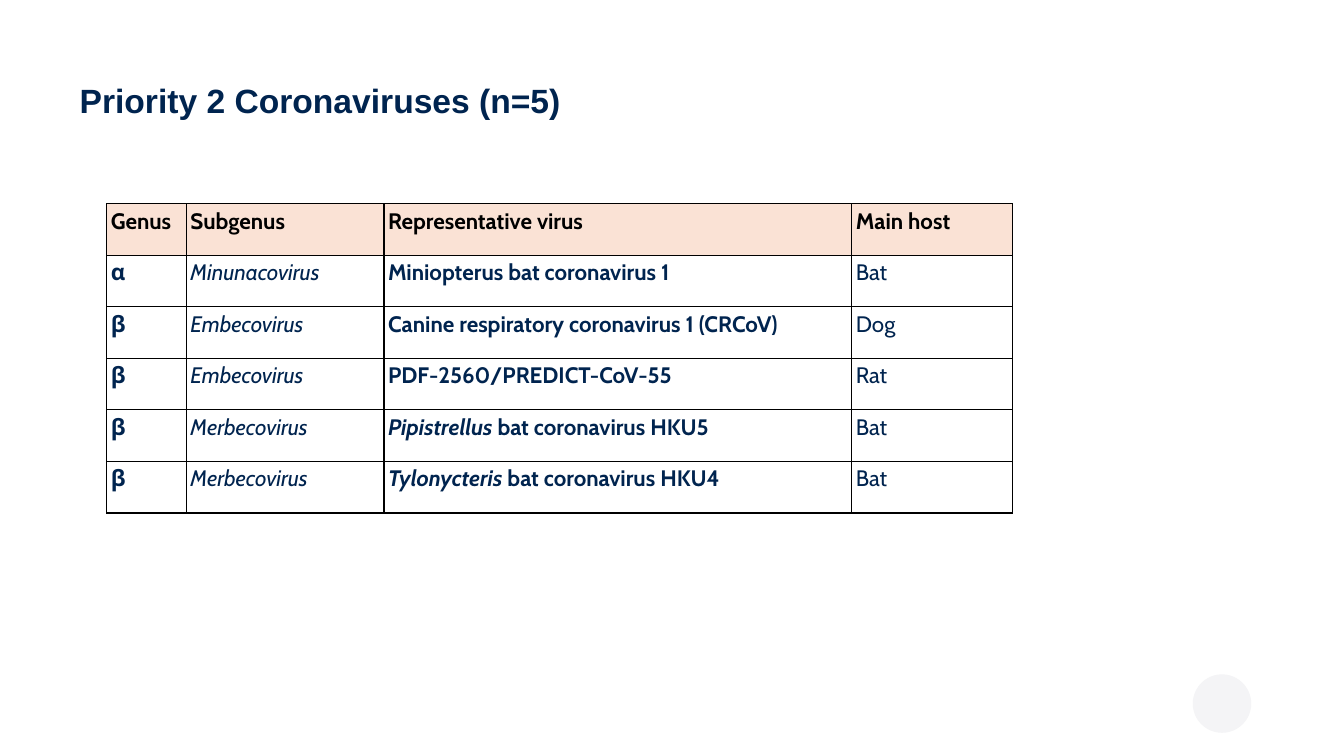
import dataclasses

import pptx
import pptx.dml.color
import pptx.enum.shapes
import pptx.enum.text
import pptx.oxml
import pptx.oxml.ns
import pptx.util
from lxml import etree


@dataclasses.dataclass(frozen=True)
class Theme:
    navy: str = "00244F"
    black: str = "000000"
    header_fill: str = "FAE2D5"
    disc_fill: str = "F4F4F6"
    title_font: str = "Arial"
    body_font: str = "Cabin"
    title_size: int = 24
    body_size: int = 16
    border_width: int = 1


THEME = Theme()
SLIDE_SIZE = (13.33, 7.5)
TITLE_BOX = (0.79, 0.77, 11.5, 0.49)
TABLE_BOX = (1.06, 2.02, 8.98, 3.07)
DISC_BOX = (11.83, 6.69, 0.58, 0.58)
COLUMN_SHARES = (0.79, 1.96, 4.64, 1.59)
HEADINGS = ("Genus", "Subgenus", "Representative virus", "Main host")
VIRUSES = (
    ("α", "Minunacovirus", "", "Miniopterus bat coronavirus 1", "Bat"),
    ("β", "Embecovirus", "", "Canine respiratory coronavirus 1 (CRCoV)", "Dog"),
    ("β", "Embecovirus", "", "PDF-2560/PREDICT-CoV-55", "Rat"),
    ("β", "Merbecovirus", "Pipistrellus", " bat coronavirus HKU5", "Bat"),
    ("β", "Merbecovirus", "Tylonycteris", " bat coronavirus HKU4", "Bat"),
)


def inches(values):
    return [pptx.util.Inches(v) for v in values]


def rgb(color):
    return pptx.dml.color.RGBColor.from_string(color)


def add_run(p, text, size=THEME.body_size, font=THEME.body_font,
            color=THEME.navy, bold=False, italic=False):
    r = p.add_run()
    r.text = text
    r.font.size = pptx.util.Pt(size)
    r.font.name = font
    r.font.color.rgb = rgb(color)
    r.font.bold = bold
    r.font.italic = italic


def set_borders(cell):
    tc_pr = cell._tc.get_or_add_tcPr()
    for i, side in enumerate(("lnL", "lnR", "lnT", "lnB")):
        ln = etree.Element(pptx.oxml.ns.qn(f"a:{side}"),
                           w=str(pptx.util.Pt(THEME.border_width)))
        fill = etree.SubElement(ln, pptx.oxml.ns.qn("a:solidFill"))
        etree.SubElement(fill, pptx.oxml.ns.qn("a:srgbClr"), val=THEME.black)
        tc_pr.insert(i, ln)


def fill_cell(cell, runs, fill=None):
    cell.margin_left = cell.margin_right = pptx.util.Inches(0.04)
    cell.margin_top = cell.margin_bottom = 0
    if fill:
        cell.fill.solid()
        cell.fill.fore_color.rgb = rgb(fill)
    else:
        cell.fill.background()
    set_borders(cell)
    p = cell.text_frame.paragraphs[0]
    p.line_spacing = 1.15
    p.space_after = pptx.util.Pt(8)
    for text, style in runs:
        add_run(p, text, **style)


def virus_cells(genus, subgenus, host_genus, virus, host):
    bold = {"bold": True}
    name = [(virus, bold)]
    if host_genus:
        name.insert(0, (host_genus, {"bold": True, "italic": True}))
    return [[(genus, bold)], [(subgenus, {"italic": True})], name, [(host, {})]]


def add_title(s, box, text):
    sp = s.shapes.title
    sp.left, sp.top, sp.width, sp.height = inches(box)
    tf = sp.text_frame
    tf.word_wrap = True
    tf.auto_size = pptx.enum.text.MSO_AUTO_SIZE.NONE
    tf.vertical_anchor = pptx.enum.text.MSO_ANCHOR.MIDDLE
    tf.margin_left, tf.margin_top, tf.margin_right, tf.margin_bottom = inches(
        (0, 0.05, 0.1, 0.05))
    p = tf.paragraphs[0]
    p.alignment = pptx.enum.text.PP_ALIGN.LEFT
    p.line_spacing = 0.9
    p.space_after = pptx.util.Pt(6)
    add_run(p, text, size=THEME.title_size, font=THEME.title_font, bold=True)


def add_virus_table(s, box):
    heading = {"color": THEME.black, "bold": True}
    rows = [[[(text, heading)] for text in HEADINGS]]
    rows += [virus_cells(*virus) for virus in VIRUSES]
    table = s.shapes.add_table(len(rows), len(HEADINGS), *inches(box)).table
    table.horz_banding = False
    for column, share in zip(table.columns, COLUMN_SHARES):
        column.width = pptx.util.Inches(box[2] * share / sum(COLUMN_SHARES))
    for i, row in enumerate(rows):
        for j, runs in enumerate(row):
            fill_cell(table.cell(i, j), runs, None if i else THEME.header_fill)


def add_disc(s, box):
    sp = s.shapes.add_shape(pptx.enum.shapes.MSO_SHAPE.OVAL, *inches(box))
    sp.shadow.inherit = False
    sp.fill.solid()
    sp.fill.fore_color.rgb = rgb(THEME.disc_fill)
    sp.line.fill.background()


def main():
    prs = pptx.Presentation()
    prs.slide_width, prs.slide_height = inches(SLIDE_SIZE)
    s = prs.slides.add_slide(prs.slide_layouts.get_by_name("Title Only"))
    add_disc(s, DISC_BOX)
    add_virus_table(s, TABLE_BOX)
    add_title(s, TITLE_BOX, "Priority 2 Coronaviruses (n=5)")
    prs.save("out.pptx")


if __name__ == "__main__":
    main()
